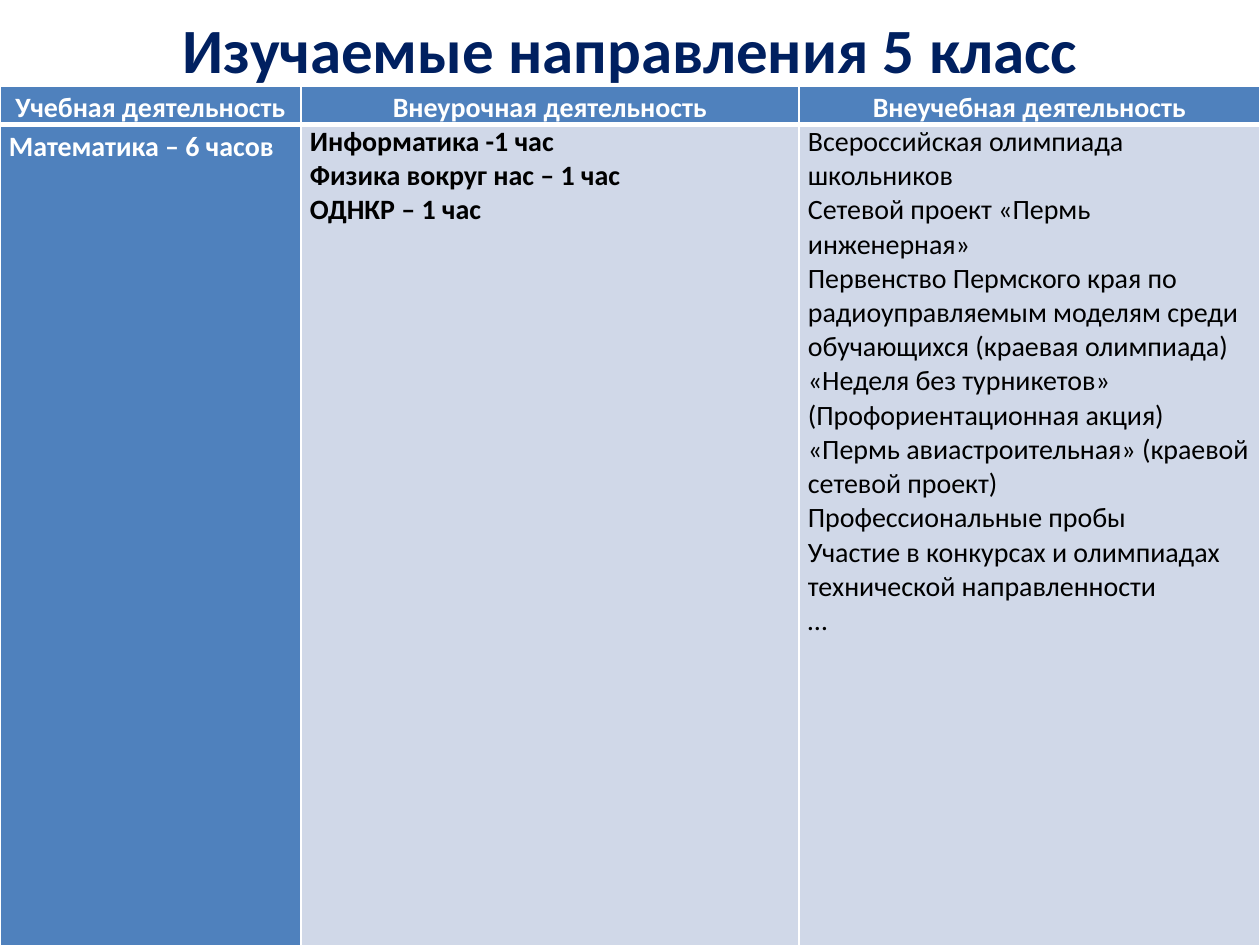
from dataclasses import dataclass

from lxml.etree import SubElement
from pptx import Presentation
from pptx.dml.color import RGBColor
from pptx.enum.text import MSO_ANCHOR as Anchor, PP_ALIGN as Align
from pptx.oxml.ns import qn
from pptx.slide import Slide
from pptx.table import _Cell as Cell
from pptx.text.text import TextFrame
from pptx.util import Emu, Pt

EMU_PER_PX = 914400 / 126
FONT = "Calibri"
NAVY = RGBColor(0x00, 0x20, 0x60)
BLUE = RGBColor(0x4F, 0x81, 0xBD)
PALE = RGBColor(0xD0, 0xD8, 0xE8)
WHITE = RGBColor(0xFF, 0xFF, 0xFF)
BLACK = RGBColor(0x00, 0x00, 0x00)

COLUMN_WIDTHS = (301, 498, 461)
ROW_HEIGHTS = (38, 822)
TABLE_TOP = 86
CELL_MARGIN = 9


@dataclass(frozen=True)
class TextStyle:
    size: int
    color: RGBColor
    bold: bool = True
    align: Align = Align.LEFT
    line_spacing: float | None = None
    space_before: float = 0


@dataclass(frozen=True)
class CellContent:
    text: str
    style: TextStyle
    fill: RGBColor


TITLE = TextStyle(36, NAVY, align=Align.CENTER)
HEADER = TextStyle(16, WHITE, align=Align.CENTER, line_spacing=1.15, space_before=0.1)
SUBJECT = TextStyle(16, WHITE, align=Align.JUSTIFY, line_spacing=1.15, space_before=0.1)
COURSES = TextStyle(16, BLACK)
EVENTS = TextStyle(16, BLACK, bold=False)

HEADINGS = ("Учебная деятельность", "Внеурочная деятельность", "Внеучебная деятельность")
COURSE_LINES = ("Информатика -1 час", "Физика вокруг нас – 1 час", "ОДНКР – 1 час")
EVENT_LINES = (
    "Всероссийская олимпиада школьников",
    "Сетевой проект «Пермь инженерная»",
    "Первенство Пермского края по радиоуправляемым моделям среди "
    "обучающихся (краевая олимпиада)",
    "«Неделя без турникетов»",
    "(Профориентационная акция)",
    "«Пермь авиастроительная» (краевой сетевой проект)",
    "Профессиональные пробы",
    "Участие в конкурсах и олимпиадах технической направленности",
    "…",
)
ROWS = (
    tuple(CellContent(heading, HEADER, BLUE) for heading in HEADINGS),
    (
        CellContent("Математика – 6 часов", SUBJECT, BLUE),
        CellContent("\n".join(COURSE_LINES), COURSES, PALE),
        CellContent("\n".join(EVENT_LINES), EVENTS, PALE),
    ),
)


def px(length: int) -> Emu:
    return Emu(round(length * EMU_PER_PX))


def write_text(text_frame: TextFrame, text: str, style: TextStyle) -> None:
    text_frame.text = text
    text_frame.word_wrap = True
    for paragraph in text_frame.paragraphs:
        paragraph.alignment = style.align
        if style.line_spacing:
            paragraph.line_spacing = style.line_spacing
        if style.space_before:
            paragraph.space_before = Pt(style.space_before)
        for run in paragraph.runs:
            run.font.name = FONT
            run.font.size = Pt(style.size)
            run.font.bold = style.bold
            run.font.color.rgb = style.color


def add_borders(cell: Cell, top: int, bottom: int) -> None:
    properties = cell._tc.get_or_add_tcPr()
    widths = {"a:lnL": 1, "a:lnR": 1, "a:lnT": top, "a:lnB": bottom}
    for position, (tag, width) in enumerate(widths.items()):
        line = SubElement(properties, qn(tag), w=str(Pt(width)))
        fill = SubElement(line, qn("a:solidFill"))
        SubElement(fill, qn("a:srgbClr"), val=str(WHITE))
        properties.insert(position, line)


def fill_cell(cell: Cell, content: CellContent) -> None:
    cell.margin_left = cell.margin_right = px(CELL_MARGIN)
    cell.margin_top = cell.margin_bottom = 0
    cell.fill.solid()
    cell.fill.fore_color.rgb = content.fill
    write_text(cell.text_frame, content.text, content.style)


def add_title(slide: Slide) -> None:
    text_frame = slide.shapes.add_textbox(px(63), 0, px(1134), px(96)).text_frame
    text_frame.vertical_anchor = Anchor.MIDDLE
    write_text(text_frame, "Изучаемые направления 5 класс", TITLE)


def add_activity_table(slide: Slide) -> None:
    table = slide.shapes.add_table(
        len(ROWS), len(COLUMN_WIDTHS), 0, px(TABLE_TOP),
        px(sum(COLUMN_WIDTHS)), px(sum(ROW_HEIGHTS)),
    ).table
    for column, width in zip(table.columns, COLUMN_WIDTHS):
        column.width = px(width)
    for row_index, (contents, height) in enumerate(zip(ROWS, ROW_HEIGHTS)):
        table.rows[row_index].height = px(height)
        top, bottom = (1, 3) if row_index == 0 else (3, 1)
        for column_index, content in enumerate(contents):
            cell = table.cell(row_index, column_index)
            fill_cell(cell, content)
            add_borders(cell, top, bottom)


def main() -> None:
    presentation = Presentation()
    presentation.slide_width = px(1260)
    presentation.slide_height = px(945)
    slide = presentation.slides.add_slide(presentation.slide_layouts[6])
    add_title(slide)
    add_activity_table(slide)
    presentation.save("out.pptx")


if __name__ == "__main__":
    main()
